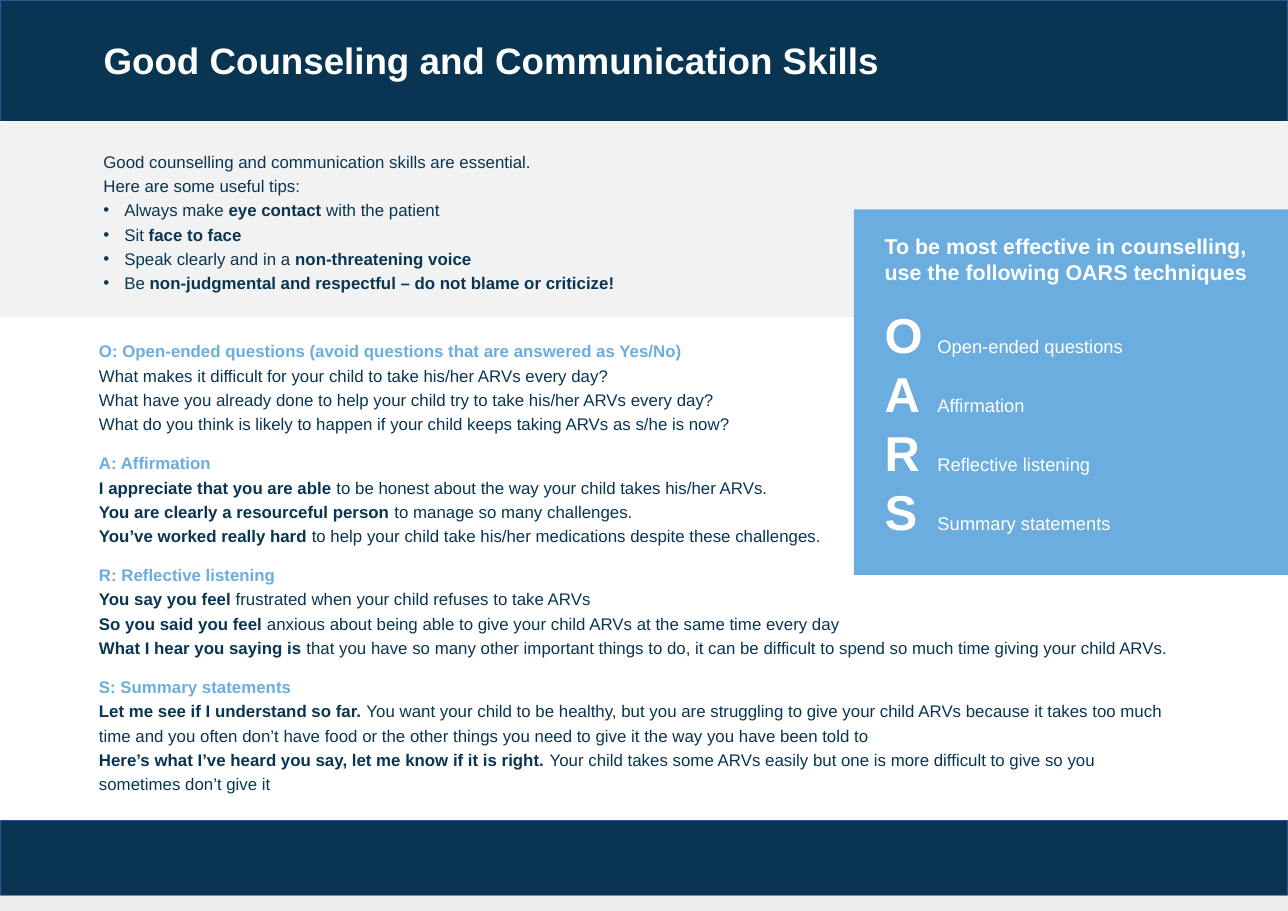
from dataclasses import dataclass

from lxml import etree
from pptx import Presentation
from pptx.dml.color import RGBColor
from pptx.enum import shapes, text
from pptx.oxml import ns
from pptx.util import Inches, Pt


@dataclass(frozen=True)
class Theme:
    font: str = "Arial"
    navy: str = "093552"
    outline: str = "325491"
    sky: str = "6CADDF"
    pale: str = "F2F2F2"
    footer: str = "EDEDED"
    white: str = "FFFFFF"
    title: float = 24
    body: float = 11
    panel_heading: float = 14
    letter: float = 32
    technique: float = 12


THEME = Theme()
SLIDE_WIDTH, SLIDE_HEIGHT = 11.69, 8.27
SECTION_GAP = 9.8
PANEL_GAP = 13
BULLET_INDENT = 0.19
TECHNIQUE_TAB = 0.48


@dataclass(frozen=True)
class Box:
    left: float
    top: float
    width: float
    height: float

    def lengths(self):
        return [Inches(n) for n in (self.left, self.top, self.width, self.height)]


@dataclass(frozen=True)
class Run:
    text: str
    bold: bool = False
    color: str = THEME.navy
    size: float = THEME.body


@dataclass(frozen=True)
class Line:
    runs: tuple[Run, ...]
    before: float = 0
    spacing: float = 1.2
    bullet: bool = False
    tab: float = 0


@dataclass(frozen=True)
class Section:
    """Name of an OARS technique, a remark on it and (bold lead, rest) examples."""
    name: str
    remark: str
    examples: tuple[tuple[str, str], ...]


INTRO = ("Good counselling and communication skills are essential.",
         "Here are some useful tips:")
TIPS = (
    ("Always make ", "eye contact ", "with the patient"),
    ("Sit ", "face to face", ""),
    ("Speak clearly and in a ", "non-threatening voice", ""),
    ("Be ", "non-judgmental and respectful – do not blame or criticize!", ""),
)
SECTIONS = (
    Section("Open-ended questions", " (avoid questions that are answered as Yes/No)", (
        ("", "What makes it difficult for your child to take his/her ARVs every day?"),
        ("", "What have you already done to help your child try to take his/her ARVs every day?"),
        ("", "What do you think is likely to happen if your child keeps taking ARVs as s/he is now?"),
    )),
    Section("Affirmation", "", (
        ("I appreciate that you are able",
         " to be honest about the way your child takes his/her ARVs."),
        ("You are clearly a resourceful person ", "to manage so many challenges."),
        ("You’ve worked really hard ",
         "to help your child take his/her medications despite these challenges."),
    )),
    Section("Reflective listening", "", (
        ("You say you feel ", "frustrated when your child refuses to take ARVs"),
        ("So you said you feel ",
         "anxious about being able to give your child ARVs at the same time every day"),
        ("What I hear you saying is ",
         "that you have so many other important things to do, it can be difficult to "
         "spend so much time giving your child ARVs."),
    )),
    Section("Summary statements", "", (
        ("Let me see if I understand so far. ",
         "You want your child to be healthy, but you are struggling to give your child "
         "ARVs because it takes too much time and you often don’t have food or the other "
         "things you need to give it the way you have been told to"),
        ("Here’s what I’ve heard you say, let me know if it is right. ",
         "Your child takes some ARVs easily but one is more difficult to give so you "
         "sometimes don’t give it"),
    )),
)


def add_band(slide, box: Box, fill: str, outline: str = "") -> None:
    shape = slide.shapes.add_shape(shapes.MSO_SHAPE.RECTANGLE, *box.lengths())
    shape.shadow.inherit = False
    shape.fill.solid()
    shape.fill.fore_color.rgb = RGBColor.from_string(fill)
    if outline:
        shape.line.color.rgb = RGBColor.from_string(outline)
        shape.line.width = Pt(1)
    else:
        shape.line.fill.background()


def add_run(paragraph, item: Run) -> None:
    run = paragraph.add_run()
    run.text = item.text
    run.font.name = THEME.font
    run.font.size = Pt(item.size)
    run.font.bold = item.bold
    run.font.color.rgb = RGBColor.from_string(item.color)


def add_bullet(paragraph) -> None:
    properties = paragraph._p.get_or_add_pPr()
    indent = Inches(BULLET_INDENT)
    properties.set("marL", str(indent))
    properties.set("indent", str(-indent))
    etree.SubElement(properties, ns.qn("a:buFont"), typeface=THEME.font)
    etree.SubElement(properties, ns.qn("a:buChar"), char="•")


def add_tab(paragraph, position: float) -> None:
    tabs = etree.SubElement(paragraph._p.get_or_add_pPr(), ns.qn("a:tabLst"))
    etree.SubElement(tabs, ns.qn("a:tab"), pos=str(Inches(position)), algn="l")


def fill_text(frame, lines: list[Line], anchor) -> None:
    frame.word_wrap = True
    frame.vertical_anchor = anchor
    for index, line in enumerate(lines):
        paragraph = frame.add_paragraph() if index else frame.paragraphs[0]
        if line.bullet:
            add_bullet(paragraph)
        if line.tab:
            add_tab(paragraph, line.tab)
        paragraph.alignment = text.PP_ALIGN.LEFT
        paragraph.line_spacing = line.spacing
        paragraph.space_before = Pt(line.before)
        for item in line.runs:
            add_run(paragraph, item)


def add_text(slide, box: Box, lines: list[Line], anchor=text.MSO_ANCHOR.TOP) -> None:
    fill_text(slide.shapes.add_textbox(*box.lengths()).text_frame, lines, anchor)


def place_title(slide, box: Box, wording: str) -> None:
    """Fill the title placeholder and bring it in front of the header band."""
    title = slide.shapes.title
    title.left, title.top, title.width, title.height = box.lengths()
    run = Run(wording, True, THEME.white, THEME.title)
    fill_text(title.text_frame, [Line((run,), spacing=0.9)], text.MSO_ANCHOR.MIDDLE)
    slide.shapes._spTree.append(title._element)


def intro_lines() -> list[Line]:
    tips = [Line(tuple(Run(part, bold) for part, bold in zip(tip, (False, True, False)) if part),
                 bullet=True) for tip in TIPS]
    return [Line((Run(sentence),)) for sentence in INTRO] + tips


def section_lines() -> list[Line]:
    lines = []
    for section in SECTIONS:
        heading = f"{section.name[0]}: {section.name}{section.remark}"
        lines.append(Line((Run(heading, True, THEME.sky),), SECTION_GAP if lines else 0))
        for lead, rest in section.examples:
            runs = (Run(lead, True), Run(rest)) if lead else (Run(rest),)
            lines.append(Line(runs))
    return lines


def panel_lines() -> list[Line]:
    heading = Run("To be most effective in counselling, use the following OARS techniques",
                  True, THEME.white, THEME.panel_heading)
    lines = [Line((heading,), spacing=1)]
    for index, section in enumerate(SECTIONS):
        letter = Run(section.name[0], True, THEME.white, THEME.letter)
        name = Run("\t" + section.name, False, THEME.white, THEME.technique)
        lines.append(Line((letter, name), 0 if index else PANEL_GAP, 1, tab=TECHNIQUE_TAB))
    return lines


def main() -> None:
    presentation = Presentation()
    presentation.slide_width = Inches(SLIDE_WIDTH)
    presentation.slide_height = Inches(SLIDE_HEIGHT)
    slide = presentation.slides.add_slide(presentation.slide_layouts[5])
    for top, height in ((0, 1.13), (7.45, 0.68)):
        add_band(slide, Box(0, top, SLIDE_WIDTH, height), THEME.navy, THEME.outline)
    place_title(slide, Box(0.84, 0, 10.05, 1.13), "Good Counseling and Communication Skills")
    add_band(slide, Box(0, 1.1, SLIDE_WIDTH, 1.78), THEME.pale)
    add_text(slide, Box(0.84, 1.29, 6.27, 1.41), intro_lines())
    add_text(slide, Box(0.8, 3.01, 9.96, 4.36), section_lines())
    add_band(slide, Box(0, 8.13, SLIDE_WIDTH, 0.14), THEME.footer)
    add_band(slide, Box(7.75, 1.9, 3.94, 3.32), THEME.sky)
    add_text(slide, Box(7.93, 2.03, 3.76, 2.96), panel_lines(), text.MSO_ANCHOR.MIDDLE)
    presentation.save("out.pptx")


if __name__ == "__main__":
    main()
